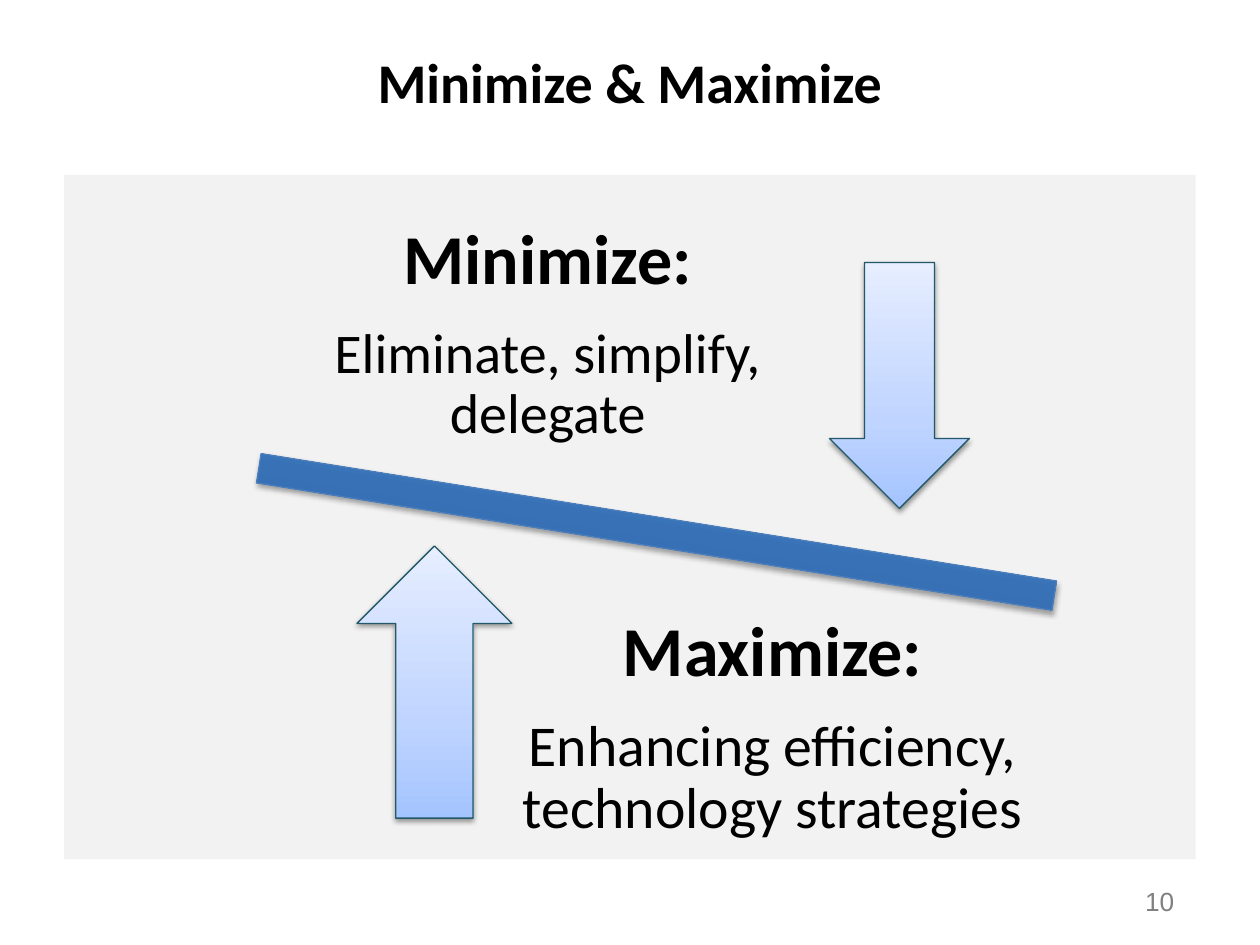
from lxml import etree
from pptx import Presentation
from pptx.dml.color import RGBColor
from pptx.enum import shapes, text
from pptx.oxml import ns
from pptx.util import Pt

COLORS = {
    "panel": "F2F2F2", "text": "000000", "number": "808080",
    "bar_line": "4B7EBC", "arrow_line": "215968",
}
BAR_STOPS = [(0, "2F5F99"), (80, "3D7CC7"), (100, "3A7CCB")]
ARROW_STOPS = [(0, "A4C4FF"), (35, "BFD4FF"), (100, "E6EEFF")]

prs = Presentation()
prs.slide_width, prs.slide_height = Pt(720), Pt(540)
s = prs.slides.add_slide(prs.slide_layouts[6])


def add_text(box, lines, font="Calibri", color="text", align=text.PP_ALIGN.CENTER,
             anchor=text.MSO_ANCHOR.MIDDLE, inset=None, wrap=True, spacing=None, after=0):
    """Add a text box; lines are (text, size, bold), after is a share of the size."""
    tf = s.shapes.add_textbox(*map(Pt, box)).text_frame
    tf.word_wrap, tf.vertical_anchor = wrap, anchor
    if inset is not None:
        tf.margin_left = tf.margin_right = tf.margin_top = tf.margin_bottom = Pt(inset)
    for i, (words, size, bold) in enumerate(lines):
        p = tf.paragraphs[0] if i == 0 else tf.add_paragraph()
        p.alignment = align
        p.line_spacing = spacing
        p.space_after = Pt(round(size * after, 2))
        r = p.add_run()
        r.text = words
        r.font.name, r.font.size, r.font.bold = font, Pt(size), bold
        r.font.color.rgb = RGBColor.from_string(COLORS[color])


def add_shaded(kind, box, stops, line, opacity, distance, rotation=0):
    """Add a shape with an upward gradient and a soft shadow below it."""
    sp = s.shapes.add_shape(kind, *map(Pt, box))
    sp.rotation = rotation
    sp.line.color.rgb = RGBColor.from_string(COLORS[line])
    sp.line.width = Pt(0.75)
    gs = "".join(f'<a:gs pos="{pos * 1000}"><a:srgbClr val="{c}"/></a:gs>' for pos, c in stops)
    grad = etree.fromstring(
        f'<a:gradFill {ns.nsdecls("a")} rotWithShape="1"><a:gsLst>{gs}</a:gsLst>'
        '<a:lin ang="16200000" scaled="0"/></a:gradFill>')
    shadow = etree.fromstring(
        f'<a:effectLst {ns.nsdecls("a")}><a:outerShdw blurRad="{Pt(3.1)}" '
        f'dist="{Pt(distance)}" dir="5400000" rotWithShape="0"><a:srgbClr val="000000">'
        f'<a:alpha val="{opacity * 1000}"/></a:srgbClr></a:outerShdw></a:effectLst>')
    ln = sp._element.spPr.find(ns.qn("a:ln"))
    ln.addprevious(grad)
    ln.addnext(shadow)


panel = s.shapes.add_shape(shapes.MSO_SHAPE.RECTANGLE, Pt(36.7), Pt(100), Pt(646.5), Pt(391))
panel.shadow.inherit = False
panel.fill.solid()
panel.fill.fore_color.rgb = RGBColor.from_string(COLORS["panel"])
panel.line.fill.background()

add_text((647.3, 502.5, 33, 25.2), [("10", 15, False)], font="Arial", color="number",
         align=text.PP_ALIGN.LEFT, anchor=text.MSO_ANCHOR.TOP, wrap=False)
add_text((36, 21.6, 648, 50), [("Minimize & Maximize", 32, True)])

add_shaded(shapes.MSO_SHAPE.MATH_MINUS, (62, 268, 626.4, 72), BAR_STOPS, "bar_line",
           35, 1.8, rotation=9.1)
for kind, box in [
    (shapes.MSO_SHAPE.DOWN_ARROW, (474, 150, 80, 140.5)),
    (shapes.MSO_SHAPE.UP_ARROW, (204, 312, 88.5, 155.5)),
]:
    add_shaded(kind, box, ARROW_STOPS, "arrow_line", 38, 1.6)

for box, heading, detail, size in [
    ((138, 110, 350, 163), "Minimize:", "Eliminate, simplify, delegate", 32),
    ((264, 335, 355, 163), "Maximize:", "Enhancing efficiency, technology strategies", 33),
]:
    add_text(box, [(heading, 40, True), (detail, size, False)],
             inset=22.4, spacing=0.9, after=0.35)

prs.save("out.pptx")
